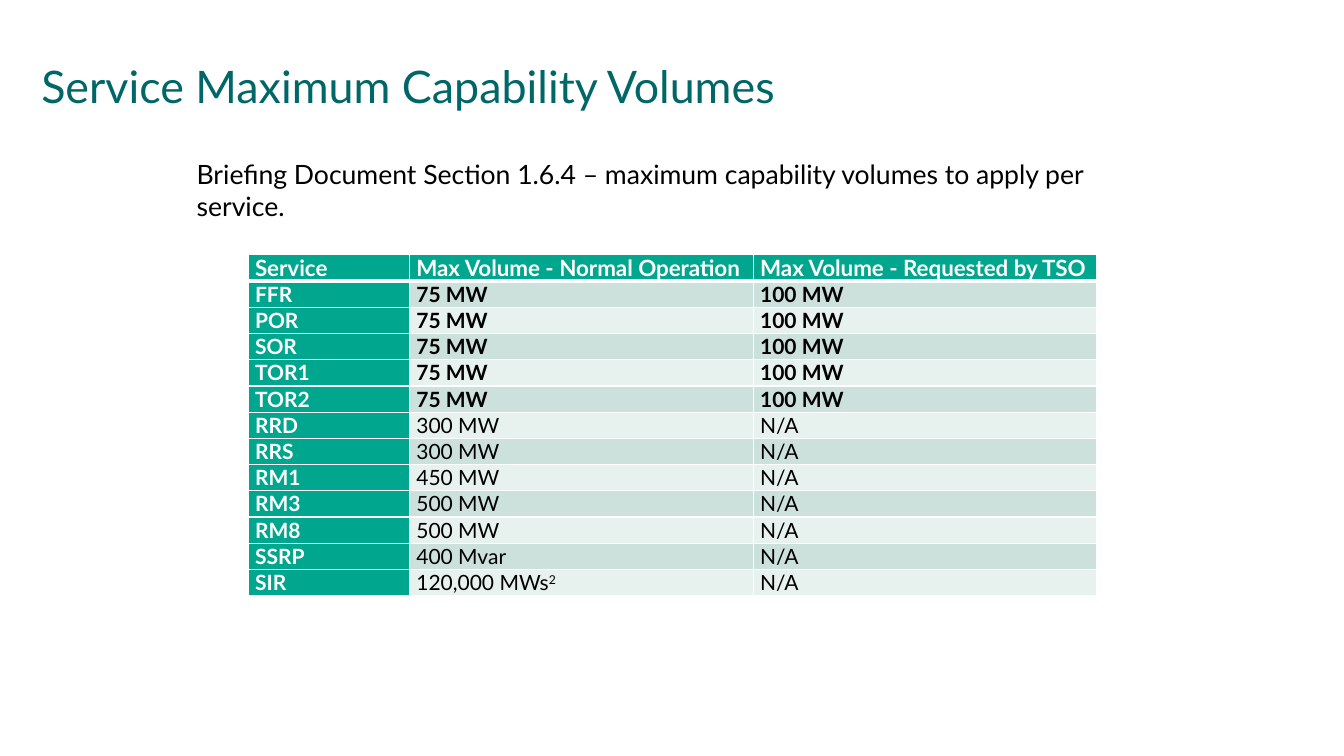
from dataclasses import dataclass

from pptx import Presentation
from pptx import util as u
from pptx.dml.color import RGBColor
from pptx.enum import text
from pptx.oxml import parse_xml
from pptx.oxml.ns import nsdecls


@dataclass(frozen=True)
class Theme:
    font: str = "Lato"
    title: str = "006768"
    ink: str = "000000"
    white: str = "FFFFFF"
    accent: str = "00A78E"
    bands: tuple = ("CCE1DB", "E7F1EE")
    title_size: int = 32
    body_size: int = 19
    header_size: int = 16
    cell_size: int = 15
    line: int = 1
    header_line: int = 3


class SlideBuilder:
    def __init__(self, slide, theme):
        self.slide = slide
        self.theme = theme

    def format_runs(self, paragraph, size, color, bold=False):
        for run in paragraph.runs:
            run.font.name = self.theme.font
            run.font.size = u.Pt(size)
            run.font.bold = bold
            run.font.color.rgb = RGBColor.from_string(color)

    def fill_placeholder(self, shape, wording, box, size, color, inset_x, inset_y):
        shape.left, shape.top, shape.width, shape.height = map(u.Inches, box)
        frame = shape.text_frame
        frame.text = wording
        frame.word_wrap = True
        frame.auto_size = text.MSO_AUTO_SIZE.NONE
        frame.vertical_anchor = text.MSO_ANCHOR.TOP
        frame.margin_left = frame.margin_right = u.Inches(inset_x)
        frame.margin_top = frame.margin_bottom = u.Inches(inset_y)
        paragraph = frame.paragraphs[0]
        paragraph.alignment = text.PP_ALIGN.LEFT
        paragraph.space_before = u.Pt(0)
        self.format_runs(paragraph, size, color)
        return paragraph

    def title(self, wording, box):
        paragraph = self.fill_placeholder(
            self.slide.shapes.title, wording, box,
            self.theme.title_size, self.theme.title, 0, 0)
        paragraph.line_spacing = 0.9

    def body(self, wording, box):
        paragraph = self.fill_placeholder(
            self.slide.placeholders[1], wording, box,
            self.theme.body_size, self.theme.ink, 0.1, 0.05)
        properties = paragraph._p.get_or_add_pPr()
        properties.set("marL", "0")
        properties.set("indent", "0")
        properties.append(parse_xml(f"<a:buNone {nsdecls('a')}/>"))

    def borders(self, cell, row):
        properties = cell._tc.get_or_add_tcPr()
        heavy_edge = {0: "B", 1: "T"}.get(row)
        for edge in "LRTB":
            points = self.theme.header_line if edge == heavy_edge else self.theme.line
            properties.append(parse_xml(
                f'<a:ln{edge} {nsdecls("a")} w="{u.Pt(points)}"><a:solidFill>'
                f'<a:srgbClr val="{self.theme.white}"/></a:solidFill></a:ln{edge}>'))

    def cell(self, cell, wording, row, column, bold):
        theme = self.theme
        heading = row == 0 or column == 0
        cell.margin_left = cell.margin_right = u.Inches(0.07)
        cell.margin_top = cell.margin_bottom = 0
        cell.vertical_anchor = text.MSO_ANCHOR.MIDDLE
        base, _, superscript = wording.partition("^")
        paragraph = cell.text_frame.paragraphs[0]
        paragraph.text = base
        if superscript:
            run = paragraph.add_run()
            run.text = superscript
            run.font._element.set("baseline", "30000")
        left_aligned = row == 0 and column > 0
        paragraph.alignment = text.PP_ALIGN.LEFT if left_aligned else text.PP_ALIGN.JUSTIFY
        self.format_runs(
            paragraph,
            theme.header_size if row == 0 else theme.cell_size,
            theme.white if heading else theme.ink,
            heading or bold)
        self.borders(cell, row)
        cell.fill.solid()
        color = theme.accent if heading else theme.bands[(row - 1) % 2]
        cell.fill.fore_color.rgb = RGBColor.from_string(color)

    def table(self, rows, left, top, widths, header_height, row_height, bold_rows):
        heights = [header_height] + [row_height] * (len(rows) - 1)
        table = self.slide.shapes.add_table(
            len(rows), len(widths), u.Inches(left), u.Inches(top),
            u.Inches(sum(widths)), u.Inches(sum(heights))).table
        table.first_col = True
        for column, width in zip(table.columns, widths):
            column.width = u.Inches(width)
        for row, height in zip(table.rows, heights):
            row.height = u.Inches(height)
        for row, values in enumerate(rows):
            for column, wording in enumerate(values):
                self.cell(table.cell(row, column), wording, row, column, row in bold_rows)


def main():
    presentation = Presentation()
    presentation.slide_width = u.Inches(13.33)
    presentation.slide_height = u.Inches(7.5)
    slide = presentation.slides.add_slide(presentation.slide_layouts[1])
    builder = SlideBuilder(slide, Theme())

    fast_services = ["FFR", "POR", "SOR", "TOR1", "TOR2"]
    slow_services = [
        ("RRD", "300 MW"), ("RRS", "300 MW"), ("RM1", "450 MW"), ("RM3", "500 MW"),
        ("RM8", "500 MW"), ("SSRP", "400 Mvar"), ("SIR", "120,000 MWs^2"),
    ]
    rows = [("Service", "Max Volume - Normal Operation", "Max Volume - Requested by TSO")]
    rows += [(service, "75 MW", "100 MW") for service in fast_services]
    rows += [(service, volume, "N/A") for service, volume in slow_services]

    builder.title("Service Maximum Capability Volumes", (0.41, 0.64, 11.5, 1.45))
    builder.table(rows, 2.46, 2.52, (1.6, 3.41, 3.41), 0.27, 0.26,
                  range(1, len(fast_services) + 1))
    builder.body(
        "Briefing Document Section 1.6.4 – maximum capability volumes to apply per service.",
        (1.85, 1.52, 9.38, 0.88))
    presentation.save("out.pptx")


if __name__ == "__main__":
    main()
